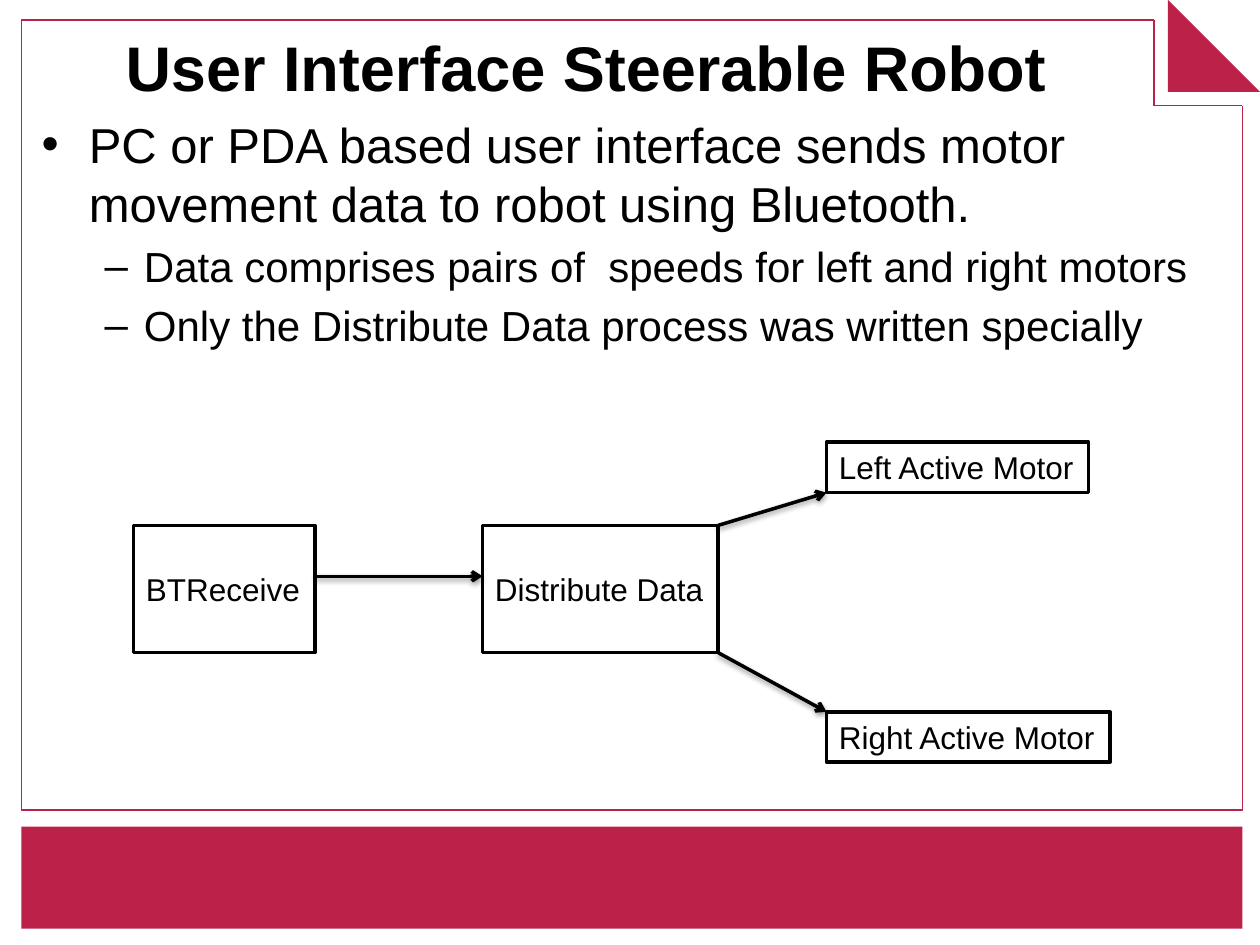
"""Build the slide on a robot steered from a user interface over Bluetooth."""
from lxml import etree
from pptx import Presentation, util as u
from pptx.dml.color import RGBColor
from pptx.enum import shapes as kinds, text as t
from pptx.oxml.ns import qn

COLOURS = {"brand": "BC2149", "ink": "000000", "paper": "FFFFFF"}
FONT = "Arial"
WIDTH, HEIGHT = 10, 7.5

TITLE = "User Interface Steerable Robot"
POINTS = [
    (0, 28, "PC or PDA based user interface sends motor movement data to robot using Bluetooth."),
    (1, 24, "Data comprises pairs of  speeds for left and right motors"),
    (1, 24, "Only the Distribute Data process was written specially"),
]

RECT = kinds.MSO_SHAPE.RECTANGLE
LEFT, TOP, FRAME_WIDTH = 0.17, 0.16, 9.69
RIGHT = LEFT + FRAME_WIDTH
NOTCH, FOLD = 0.84, 0.73
NOTCH_LEFT = WIDTH - NOTCH
FRAME = [
    (RECT, (LEFT, TOP, FRAME_WIDTH, 6.27), "paper", "brand"),
    (RECT, (NOTCH_LEFT, 0, NOTCH, NOTCH), "paper", None),
    (kinds.MSO_SHAPE.RIGHT_TRIANGLE, (WIDTH - FOLD, 0, FOLD, FOLD), "brand", None),
    (RECT, (LEFT, 6.56, FRAME_WIDTH, 0.81), "brand", None),
]
NOTCH_EDGES = [
    ((NOTCH_LEFT, TOP), (NOTCH_LEFT, NOTCH)),
    ((NOTCH_LEFT, NOTCH), (RIGHT, NOTCH)),
]

COLUMNS = [1.06, 3.83, 6.56]
ROWS = [3.51, 4.17, 5.65]
TALL, SHORT = 1.01, 0.4
PROCESSES = {
    "BTReceive": (COLUMNS[0], ROWS[1], 1.44, TALL),
    "Left Active Motor": (COLUMNS[2], ROWS[0], 2.08, SHORT),
    "Right Active Motor": (COLUMNS[2], ROWS[2], 2.25, SHORT),
    "Distribute Data": (COLUMNS[1], ROWS[1], 1.87, TALL),
}
CHANNELS = [
    ("Distribute Data", 0, "Left Active Motor", 1),
    ("BTReceive", 0.4, "Distribute Data", 0.4),
    ("Distribute Data", 1, "Right Active Motor", 0),
]


def inches(lengths):
    return [u.Inches(length) for length in lengths]


def colour(name):
    return RGBColor.from_string(COLOURS[name])


def write(paragraph, text, size=18, bold=False, align=None):
    paragraph.text = text
    paragraph.alignment = align
    font = paragraph.font
    font.name, font.size, font.bold = FONT, u.Pt(size), bold
    font.color.rgb = colour("ink")


def place(holder, box, anchor):
    holder.left, holder.top, holder.width, holder.height = inches(box)
    frame = holder.text_frame
    frame.auto_size = t.MSO_AUTO_SIZE.NONE
    frame.vertical_anchor = anchor
    return frame


def draw_shape(slide, kind, box, fill, line=None, weight=0.75):
    shape = slide.shapes.add_shape(kind, *inches(box))
    shape.shadow.inherit = False
    shape.fill.solid()
    shape.fill.fore_color.rgb = colour(fill)
    if line:
        shape.line.color.rgb = colour(line)
        shape.line.width = u.Pt(weight)
    else:
        shape.line.fill.background()
    return shape


def draw_line(slide, start, end, ink, weight, arrow=False):
    line = slide.shapes.add_connector(kinds.MSO_CONNECTOR.STRAIGHT, *inches(start + end))
    line.line.color.rgb = colour(ink)
    line.line.width = u.Pt(weight)
    if arrow:
        etree.SubElement(line.line._get_or_add_ln(), qn("a:tailEnd"), type="arrow")
    else:
        etree.SubElement(line._element.spPr, qn("a:effectLst"))


def add_frame(slide):
    for kind, box, fill, line in FRAME:
        draw_shape(slide, kind, box, fill, line)
    for start, end in NOTCH_EDGES:
        draw_line(slide, start, end, "brand", 0.75)


def add_text(slide):
    title, body = slide.shapes.title, slide.placeholders[1]
    for holder in (title, body):
        slide.shapes._spTree.append(holder._element)
    heading = place(title, (0.23, 0.21, 8.84, 0.63), t.MSO_ANCHOR.MIDDLE)
    write(heading.paragraphs[0], TITLE, size=36, bold=True, align=t.PP_ALIGN.CENTER)
    points = place(body, (0.23, 0.86, 9.53, 1.87), t.MSO_ANCHOR.TOP)
    for index, (level, size, text) in enumerate(POINTS):
        paragraph = points.add_paragraph() if index else points.paragraphs[0]
        paragraph.level = level
        write(paragraph, text, size=size)
    points.paragraphs[0].space_before = u.Pt(0)


def add_diagram(slide):
    for name, box in PROCESSES.items():
        process = draw_shape(slide, RECT, box, "paper", "ink", 2)
        process.text_frame.word_wrap = False
        process.text_frame.vertical_anchor = t.MSO_ANCHOR.MIDDLE
        write(process.text_frame.paragraphs[0], name, align=t.PP_ALIGN.LEFT)
    for source, source_share, target, target_share in CHANNELS:
        left, top, width, height = PROCESSES[source]
        start = (left + width, top + height * source_share)
        left, top, width, height = PROCESSES[target]
        end = (left, top + height * target_share)
        draw_line(slide, start, end, "ink", 2, arrow=True)


def main():
    deck = Presentation()
    deck.slide_width, deck.slide_height = inches((WIDTH, HEIGHT))
    slide = deck.slides.add_slide(deck.slide_layouts[1])
    add_frame(slide)
    add_text(slide)
    add_diagram(slide)
    deck.save("out.pptx")


if __name__ == "__main__":
    main()
